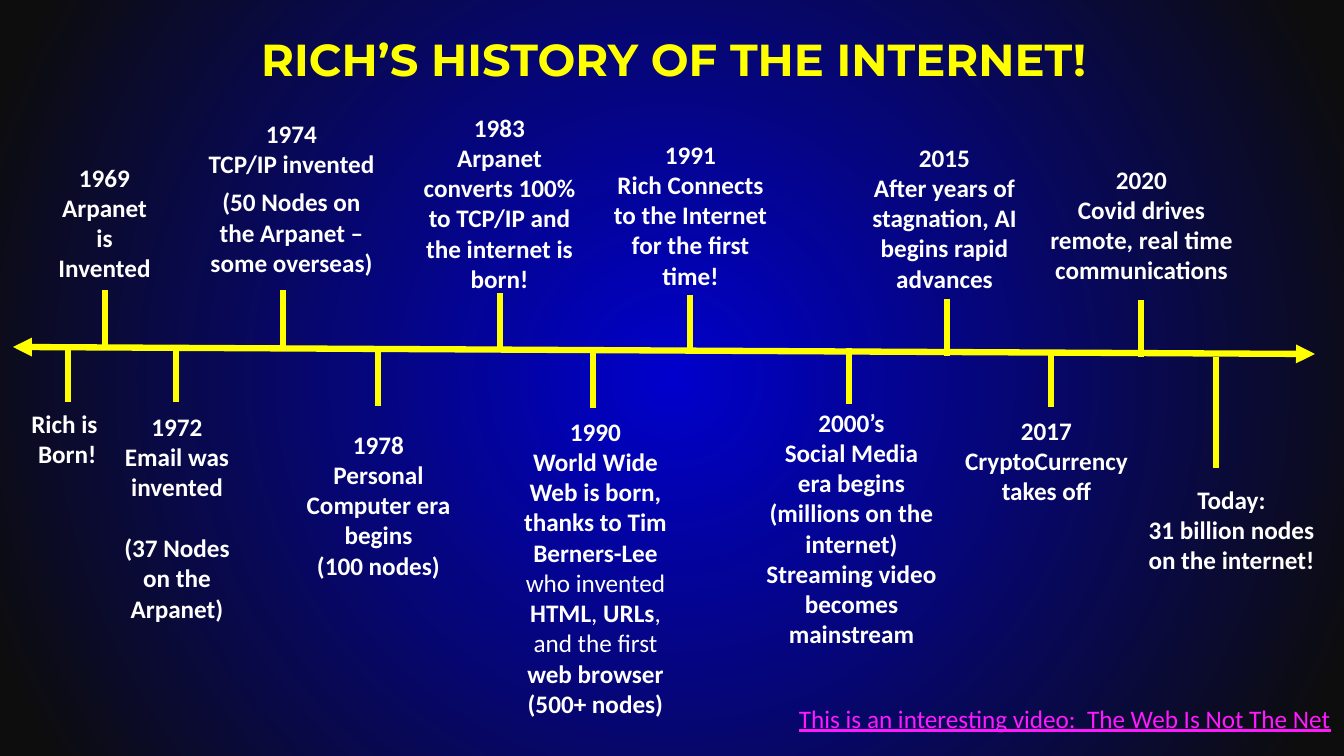
from pptx import Presentation
from pptx.dml.color import RGBColor
from pptx.enum.shapes import MSO_CONNECTOR
from pptx.enum.text import MSO_ANCHOR, MSO_AUTO_SIZE, PP_ALIGN
from pptx.oxml.ns import qn
from pptx.util import Pt
from lxml.etree import SubElement

PX = 12192000 / 1344
YELLOW = RGBColor(0xFF, 0xFF, 0x00)
WHITE = RGBColor(0xFF, 0xFF, 0xFF)
PINK = RGBColor(0xFE, 0x19, 0xFF)
BLUE = RGBColor(0x00, 0x00, 0xCC)
BLACK = RGBColor(0x0D, 0x0D, 0x0D)


def px(*values):
    return [round(v * PX) for v in values]


def add_line(x1, y1, x2, y2):
    ln = s.shapes.add_connector(MSO_CONNECTOR.STRAIGHT, *px(x1, y1, x2, y2))
    ln.line.color.rgb = YELLOW
    ln.line.width = Pt(4.5)
    SubElement(ln._element.spPr, qn("a:effectLst"))
    return ln


prs = Presentation()
prs.slide_width, prs.slide_height = px(1344, 756)
s = prs.slides.add_slide(prs.slide_layouts[5])

fill = s.background.fill
fill.gradient()
for stop, color, position in zip(fill.gradient_stops, (BLUE, BLACK), (0, 0.95)):
    stop.color.rgb = color
    stop.position = position
grad = s._element.find(".//" + qn("a:gradFill"))
grad.remove(grad.find(qn("a:lin")))
path = SubElement(grad, qn("a:path"), {"path": "circle"})
SubElement(path, qn("a:fillToRect"), dict.fromkeys("ltrb", "50000"))

title = s.shapes.title
title.left, title.top, title.width, title.height = px(69, 0, 1210, 118)
tf = title.text_frame
tf.auto_size = MSO_AUTO_SIZE.NONE
tf.vertical_anchor = MSO_ANCHOR.MIDDLE
p = tf.paragraphs[0]
p.alignment = PP_ALIGN.CENTER
r = p.add_run()
r.text = "RICH’S HISTORY OF THE INTERNET!"
r.font.name = "Montserrat"
r.font.size = Pt(32)
r.font.bold = True
r.font.color.rgb = YELLOW

axis = add_line(13, 347, 1315, 354)
for end in ("a:headEnd", "a:tailEnd"):
    SubElement(axis.line._ln, qn(end), {"type": "triangle"})

# Text box left, top, width; tick x, top, bottom; gap before last paragraph; paragraphs
events = [
    (21, 403, 87, 68, 347, 402, 0, ["Rich is", " Born!"]),
    (45, 157, 119, 105, 290, 347, 0, ["1969", "Arpanet is Invented"]),
    (113, 406, 128, 176, 347, 402, 22,
     ["1972", "Email was invented", "(37 Nodes on the Arpanet)"]),
    (196, 113, 191, 283, 290, 347, 6,
     ["1974", "TCP/IP invented", "(50 Nodes on the Arpanet – some overseas)"]),
    (283, 424, 191, 378, 350, 406, 0,
     ["1978", "Personal Computer era begins", "(100 nodes)"]),
    (404, 107, 191, 500, 293, 350, 0,
     ["1983", "Arpanet converts 100% to TCP/IP and the internet is born!"]),
    (500, 411, 191, 593, 353, 408, 0,
     ["1990",
      "World Wide Web is born, thanks to Tim Berners-Lee| who invented |HTML|, |URLs"
      "|, and the first |web browser",
      "(500+ nodes)"]),
    (595, 134, 191, 690, 295, 351, 0,
     ["1991", "Rich Connects to the Internet for the first time!"]),
    (756, 402, 191, 849, 348, 404, 0,
     ["2000’s", "Social Media era begins", "(millions on the internet)",
      "Streaming video becomes mainstream"]),
    (849, 137, 191, 947, 299, 356, 0,
     ["2015", "After years of stagnation, AI begins rapid advances"]),
    (951, 410, 191, 1051, 351, 407, 0, ["2017", "CryptoCurrency takes off"]),
    (1039, 159, 205, 1141, 300, 357, 0,
     ["2020", "Covid drives remote, real time communications"]),
    (1129, 479, 205, 1216, 357, 468, 0,
     ["Today:", "31 billion nodes on the internet!"]),
]
for left, top, width, tick, y1, y2, gap, paragraphs in events:
    add_line(tick, y1, tick, y2)
    tf = s.shapes.add_textbox(*px(left, top, width, 132)).text_frame
    tf.word_wrap = width > 100
    for i, text in enumerate(paragraphs):
        p = tf.add_paragraph() if i else tf.paragraphs[0]
        p.alignment = PP_ALIGN.CENTER
        for j, part in enumerate(text.split("|")):
            r = p.add_run()
            r.text = part
            r.font.name = "Calibri"
            r.font.size = Pt(18)
            r.font.bold = j % 2 == 0
            r.font.color.rgb = WHITE
    if gap:
        p.space_before = Pt(gap)

tf = s.shapes.add_textbox(*px(789, 698, 555, 40)).text_frame
tf.word_wrap = True
r = tf.paragraphs[0].add_run()
r.text = "This is an interesting video:  The Web Is Not The Net"
r.font.name = "Calibri"
r.font.size = Pt(18)
r.font.underline = True
r.font.color.rgb = PINK

prs.save("out.pptx")
